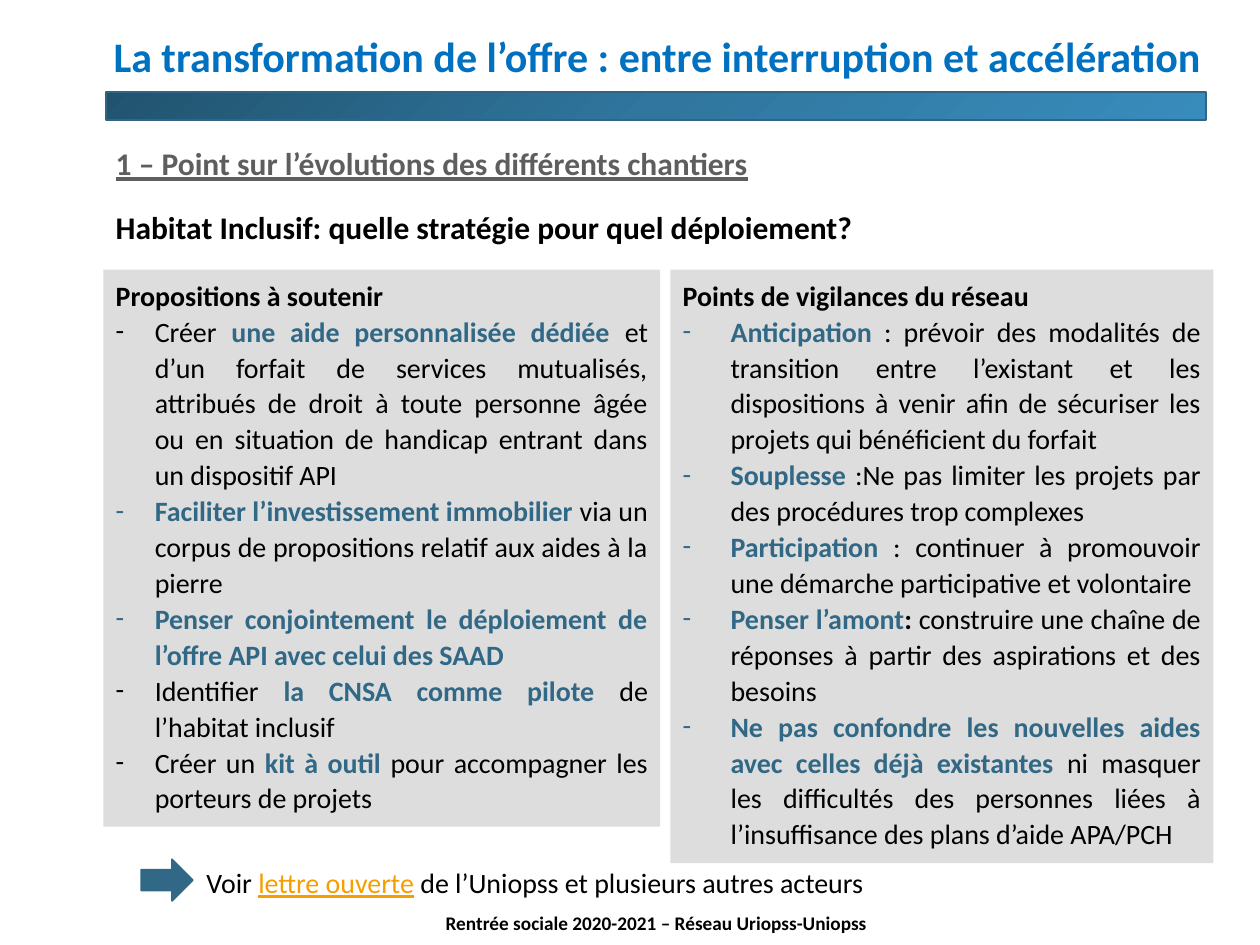
from copy import deepcopy

from pptx import Presentation
from pptx.dml.color import RGBColor
from pptx.enum.shapes import MSO_SHAPE
from pptx.enum.text import MSO_ANCHOR, PP_ALIGN
from pptx.oxml.ns import qn
from pptx.util import Inches, Pt
from lxml import etree

RECT, ARROW = MSO_SHAPE.RECTANGLE, MSO_SHAPE.RIGHT_ARROW
TOP, BASE = MSO_ANCHOR.TOP, MSO_ANCHOR.BOTTOM
LEFT, MID, RIGHT, JUST = (PP_ALIGN.LEFT, PP_ALIGN.CENTER,
                          PP_ALIGN.RIGHT, PP_ALIGN.JUSTIFY)

HEX = {"title": "0070C0", "grey": "5E5E5E", "ink": "000000", "blue": "316886",
       "panel": "DDDDDD", "link": "F59E00", "edge": "306684"}
FADE = [(0, "21536F"), (0.5, "30769E"), (1, "388CBC")]

# Run styles: colour name and font values
STYLES = {
    "plain": ("ink", {"bold": False}),
    "bold": ("ink", {"bold": True}),
    "key": ("blue", {"bold": True}),
    "title": ("title", {"bold": True}),
    "head": ("grey", {"bold": True, "underline": True}),
    "link": ("link", {"bold": False, "underline": True}),
}

# Single lines: place, size, alignment, anchor, line spacing, wrap, runs
LINES = [
    ((0.58, 0.13, 9.05, 0.57), 24, RIGHT, BASE, 0.9, True,
     [("title", "La transformation de l’offre : entre interruption et accélération")]),
    ((0.82, 1.13, 8.71, 0.33), 18, LEFT, TOP, 0.9, True,
     [("head", "1 – Point sur l’évolutions des différents chantiers")]),
    ((0.82, 1.6, 8.54, 0.4), 18, LEFT, TOP, 1.0, True,
     [("bold", "Habitat Inclusif: quelle stratégie pour quel déploiement?")]),
    ((1.54, 6.82, 5.54, 0.37), 16, LEFT, TOP, 1.0, False,
     [("plain", "Voir "), ("link", "lettre ouverte"),
      ("plain", " de l’Uniopss et plusieurs autres acteurs")]),
    ((2.77, 7.18, 4.88, 0.29), 11, MID, TOP, 1.0, True,
     [("bold", "Rentrée sociale 2020-2021 – Réseau Uriopss-Uniopss")]),
]

# Panels: place, bullet indent, heading, bullets
PANELS = [
    ((0.82, 2.14, 4.42, 4.42), 0.31, "Propositions à soutenir", [
        [("plain", "Créer "), ("key", "une aide personnalisée dédiée "),
         ("plain", "et d’un forfait de services mutualisés, attribués de droit à "
                   "toute personne âgée ou en situation de handicap entrant dans "
                   "un dispositif API")],
        [("key", "Faciliter l’investissement immobilier "),
         ("plain", "via un corpus de propositions relatif aux aides à la pierre")],
        [("key", "Penser conjointement le déploiement de l’offre API avec celui "
                 "des SAAD")],
        [("plain", "Identifier "), ("key", "la CNSA comme pilote "),
         ("plain", "de l’habitat inclusif")],
        [("plain", "Créer un "), ("key", "kit à outil "),
         ("plain", "pour accompagner les porteurs de projets")],
    ]),
    ((5.32, 2.14, 4.31, 4.71), 0.38, "Points de vigilances du réseau", [
        [("key", "Anticipation"),
         ("plain", " : prévoir des modalités de transition entre l’existant et les "
                   "dispositions à venir afin de sécuriser les projets qui "
                   "bénéficient du forfait")],
        [("key", "Souplesse "),
         ("plain", ":Ne pas limiter les projets par des procédures trop complexes")],
        [("key", "Participation "),
         ("plain", ": continuer à promouvoir une démarche participative et volontaire")],
        [("key", "Penser l’amont"), ("bold", ": "),
         ("plain", "construire une chaîne de réponses à partir des aspirations et "
                   "des besoins")],
        [("key", "Ne pas confondre les nouvelles aides avec celles déjà existantes"),
         ("plain", " ni masquer les difficultés des personnes liées à "
                   "l’insuffisance des plans d’aide APA/PCH")],
    ]),
]


def color(name):
    return RGBColor.from_string(HEX[name])


def write(para, runs, size, align, space):
    para.alignment, para.line_spacing = align, space
    for style, text in runs:
        run = para.add_run()
        run.text = text
        tone, values = STYLES[style]
        run.font.color.rgb = color(tone)
        for key, value in {"name": "Calibri", "size": Pt(size), **values}.items():
            setattr(run.font, key, value)


def dash(para, indent):
    props = para._p.get_or_add_pPr()
    props.set("marL", str(Inches(indent)))
    props.set("indent", str(-Inches(indent)))
    etree.SubElement(props, qn("a:buFont")).set("typeface", "Calibri")
    etree.SubElement(props, qn("a:buChar")).set("char", "-")


def shape(kind, place, fill, edge=None):
    item = slide.shapes.add_shape(kind, *map(Inches, place))
    item.shadow.inherit = False
    item.fill.solid()
    item.fill.fore_color.rgb = color(fill)
    if edge:
        item.line.color.rgb = color(edge)
        item.line.width = Pt(1)
    else:
        item.line.fill.background()
    return item


deck = Presentation()
deck.slide_width, deck.slide_height = Inches(10), Inches(7.5)
slide = deck.slides.add_slide(deck.slide_layouts[6])

# Gradient bar under the title
bar = shape(RECT, (0.84, 0.73, 8.73, 0.22), "edge", "edge")
bar.fill.gradient()
bar.fill.gradient_angle = 315
stops = bar._element.spPr.find(".//" + qn("a:gsLst"))
stops.append(deepcopy(stops[-1]))
for stop, (pos, tone) in zip(bar.fill.gradient_stops, FADE):
    stop.position = pos
    stop.color.rgb = RGBColor.from_string(tone)

# Arrow beside the closing line
shape(ARROW, (1.12, 6.82, 0.41, 0.33), "blue", "blue")

# Grey panels
for place, indent, head, items in PANELS:
    frame = shape(RECT, place, "panel").text_frame
    frame.word_wrap, frame.vertical_anchor = True, TOP
    write(frame.paragraphs[0], [("bold", head)], 16, JUST, 1.07)
    for runs in items:
        para = frame.add_paragraph()
        write(para, runs, 16, JUST, 1.07)
        dash(para, indent)

# Single lines of text
for place, size, align, anchor, space, wrap, runs in LINES:
    frame = slide.shapes.add_textbox(*map(Inches, place)).text_frame
    frame.word_wrap, frame.vertical_anchor = wrap, anchor
    write(frame.paragraphs[0], runs, size, align, space)

deck.save("out.pptx")
